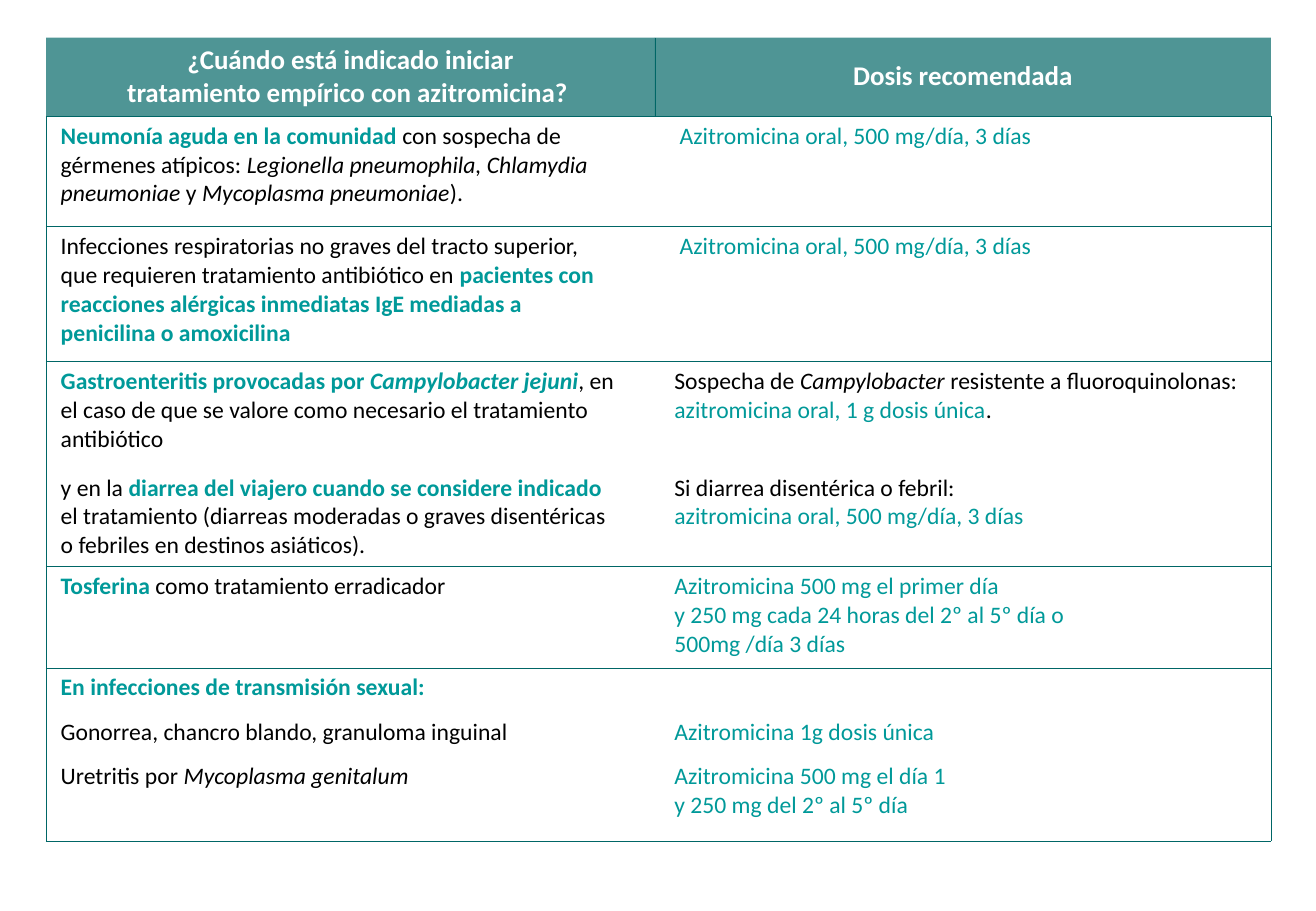
from dataclasses import dataclass

from lxml import etree
from pptx import Presentation
from pptx.dml.color import RGBColor
from pptx.enum.text import MSO_ANCHOR, PP_ALIGN
from pptx.oxml.ns import qn
from pptx.util import Inches, Pt


@dataclass(frozen=True)
class Theme:
    font: str = "Calibri"
    header_size: int = 16
    body_size: int = 14
    dark_teal: str = "006666"
    teal: str = "009999"
    black: str = "000000"
    white: str = "FFFFFF"
    header_opacity: int = 69
    border_width: float = 0.25


@dataclass(frozen=True)
class Para:
    """Runs are (text, marks) pairs; marks: t teal, w white, b bold, i italic."""
    runs: tuple
    align: PP_ALIGN = PP_ALIGN.LEFT
    space_before: int = 0
    line_height: int = 0


SINGLE_DOSE = Para(((" ", ""), ("Azitromicina oral, 500 mg/día, 3 días", "t")),
                   PP_ALIGN.JUSTIFY)

HEADERS = [
    "¿Cuándo está indicado iniciar\ntratamiento empírico con azitromicina? ",
    "Dosis recomendada",
]

INDICATIONS = [
    ([Para((("Neumonía aguda en la comunidad ", "tb"),
            ("con sospecha de gérmenes atípicos: ", ""),
            ("Legionella pneumophila, Chlamydia pneumoniae ", "i"),
            ("y ", ""), ("Mycoplasma pneumoniae", "i"), (").", "")))],
     [SINGLE_DOSE]),
    ([Para((("Infecciones respiratorias no graves del tracto superior, que "
             "requieren tratamiento antibiótico en ", ""),
            ("pacientes con reacciones alérgicas inmediatas IgE mediadas a "
             "penicilina o amoxicilina", "tb")))],
     [SINGLE_DOSE]),
    ([Para((("Gastroenteritis provocadas por ", "tb"),
            ("Campylobacter jejuni", "tbi"),
            (", en el caso de que se valore como necesario el tratamiento "
             "antibiótico", ""))),
      Para((("y en la ", ""),
            ("diarrea del viajero cuando se considere indicado ", "tb"),
            ("el tratamiento (diarreas moderadas o graves disentéricas o "
             "febriles en destinos asiáticos).", "")), space_before=12)],
     [Para((("Sospecha de ", ""), ("Campylobacter", "i"),
            (" resistente a fluoroquinolonas: ", ""),
            ("azitromicina oral, 1 g dosis única", "t"), (".", ""))),
      Para((("Si diarrea disentérica o febril:\n", ""),
            ("azitromicina oral, 500 mg/día, 3 días", "t")),
           space_before=29)]),
    ([Para((("Tosferina", "tb"), (" como tratamiento erradicador", "")))],
     [Para((("Azitromicina 500 mg el primer día\n"
             "y 250 mg cada 24 horas del 2º al 5º día o\n"
             "500mg /día 3 días", "t"),))]),
    ([Para((("En infecciones de transmisión sexual:", "tb"),),
           line_height=16)],
     [Para(())]),
    ([Para((("Gonorrea, chancro blando, granuloma inguinal", ""),))],
     [Para((("Azitromicina 1g dosis única", "t"),), PP_ALIGN.JUSTIFY)]),
    ([Para((("Uretritis por ", ""), ("Mycoplasma genitalum", "i")))],
     [Para((("Azitromicina 500 mg el día 1\ny 250 mg del 2º al 5º día", "t"),))]),
]

COLUMN_WIDTHS = (5.01, 5.07)
ROW_HEIGHTS = (0.62, 0.91, 1.11, 1.69, 0.84, 0.36, 0.36, 0.7)
COLUMN_MARGINS = ((0.12, 0.28), (0.16, 0.2))
# The last three rows form one block, so only these rows close with a rule.
RULED_ROWS = {0, 1, 2, 3, 4, 7}


class TreatmentSlide:
    def __init__(self, presentation, theme):
        self.theme = theme
        self.slide = presentation.slides.add_slide(presentation.slide_layouts[6])

    def add_table(self, left, top, widths, heights):
        frame = self.slide.shapes.add_table(
            len(heights), len(widths), Inches(left), Inches(top),
            Inches(sum(widths)), Inches(sum(heights)))
        table = frame.table
        table.first_row = table.horz_banding = False
        for column, width in zip(table.columns, widths):
            column.width = Inches(width)
        for row, height in zip(table.rows, heights):
            row.height = Inches(height)
        return table

    def fill_cell(self, cell, color, opacity=100):
        cell.fill.solid()
        cell.fill.fore_color.rgb = RGBColor.from_string(color)
        if opacity < 100:
            srgb = cell._tc.tcPr.find(f".//{qn('a:srgbClr')}")
            etree.SubElement(srgb, qn("a:alpha"), val=str(opacity * 1000))

    def border_cell(self, cell, sides):
        """Rule the given sides (letters of LRTB) and clear the others."""
        properties = cell._tc.get_or_add_tcPr()
        for index, side in enumerate("LRTB"):
            line = etree.Element(qn(f"a:ln{side}"),
                                 w=str(Pt(self.theme.border_width)))
            if side in sides:
                fill = etree.SubElement(line, qn("a:solidFill"))
                etree.SubElement(fill, qn("a:srgbClr"), val=self.theme.dark_teal)
            else:
                etree.SubElement(line, qn("a:noFill"))
            properties.insert(index, line)

    def write_cell(self, cell, paras, size):
        frame = cell.text_frame
        for index, para in enumerate(paras):
            paragraph = frame.add_paragraph() if index else frame.paragraphs[0]
            paragraph.alignment = para.align
            paragraph.font.name = self.theme.font
            paragraph.font.size = Pt(size)
            if para.space_before:
                paragraph.space_before = Pt(para.space_before)
            if para.line_height:
                paragraph.line_spacing = Pt(para.line_height)
            for text, marks in para.runs:
                self.add_run(paragraph, text, marks)

    def add_run(self, paragraph, text, marks):
        theme = self.theme
        color = (theme.teal if "t" in marks
                 else theme.white if "w" in marks else theme.black)
        for index, line in enumerate(text.split("\n")):
            if index:
                paragraph.add_line_break()
            if line:
                run = paragraph.add_run()
                run.text = line
                run.font.bold = "b" in marks
                run.font.italic = "i" in marks
                run.font.color.rgb = RGBColor.from_string(color)

    def add_header(self, table):
        for cell, title, sides in zip(table.rows[0].cells, HEADERS, ("RB", "LB")):
            cell.vertical_anchor = MSO_ANCHOR.MIDDLE
            self.fill_cell(cell, self.theme.dark_teal, self.theme.header_opacity)
            self.border_cell(cell, sides)
            self.write_cell(cell, [Para(((title, "wb"),), PP_ALIGN.CENTER)],
                            self.theme.header_size)

    def add_indications(self, table):
        for row, indication in enumerate(INDICATIONS, start=1):
            rules = ("T" if row - 1 in RULED_ROWS else "") + (
                "B" if row in RULED_ROWS else "")
            for column, paras in enumerate(indication):
                cell = table.cell(row, column)
                left, right = COLUMN_MARGINS[column]
                cell.margin_left, cell.margin_right = Inches(left), Inches(right)
                self.fill_cell(cell, self.theme.white)
                self.border_cell(cell, "LR"[column] + rules)
                self.write_cell(cell, paras, self.theme.body_size)


def main():
    presentation = Presentation()
    presentation.slide_width = Inches(10.83)
    presentation.slide_height = Inches(7.5)
    treatment = TreatmentSlide(presentation, Theme())
    table = treatment.add_table(0.38, 0.31, COLUMN_WIDTHS, ROW_HEIGHTS)
    treatment.add_header(table)
    treatment.add_indications(table)
    presentation.save("out.pptx")


if __name__ == "__main__":
    main()
